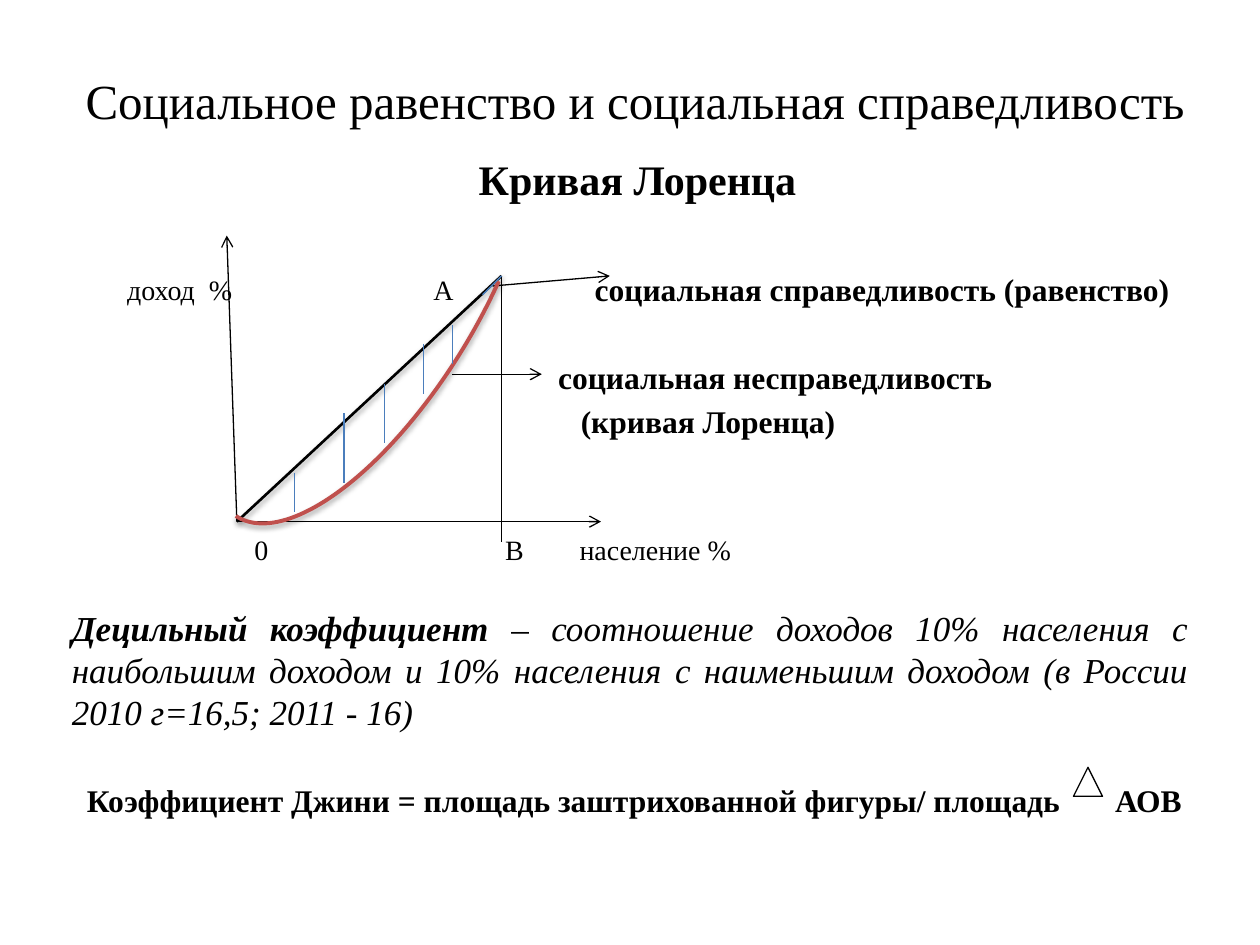
from pptx import Presentation
from pptx.dml.color import RGBColor
from pptx.enum.shapes import MSO_CONNECTOR, MSO_SHAPE
from pptx.enum.text import MSO_ANCHOR, PP_ALIGN
from pptx.oxml.ns import qn
from pptx.util import Inches, Pt
from lxml import etree

STRAIGHT = MSO_CONNECTOR.STRAIGHT
ARC, TRIANGLE = MSO_SHAPE.ARC, MSO_SHAPE.ISOSCELES_TRIANGLE
LEFT, CENTER, JUSTIFY = PP_ALIGN.LEFT, PP_ALIGN.CENTER, PP_ALIGN.JUSTIFY
MIDDLE = MSO_ANCHOR.MIDDLE
BLACK = RGBColor(0x00, 0x00, 0x00)
WHITE = RGBColor(0xFF, 0xFF, 0xFF)
RED = RGBColor(0xC0, 0x50, 0x4D)
BLUE = RGBColor(0x4B, 0x7E, 0xBC)
FONT = "Times New Roman"

TITLE = "Социальное равенство и социальная справедливость"
SUBTITLE = "Кривая Лоренца"
TERM = "Децильный коэффициент "
DEFINITION = ("– соотношение доходов 10% населения с наибольшим доходом "
              "и 10% населения с наименьшим доходом (в России 2010 г=16,5; 2011 - 16)")

AXIS_LABELS = [
    ("доход  %", 1.01, 2.16, 1),
    ("А", 3.44, 2.16, 0.3),
    ("0", 2.02, 4.23, 0.3),
    ("В", 4.01, 4.23, 0.3),
    ("население %", 4.6, 4.23, 1.5),
]
BOLD_LABELS = [
    ("социальная справедливость (равенство)", 4.72, 2.14, 4.8),
    ("социальная несправедливость", 4.43, 2.84, 4),
    ("(кривая Лоренца)", 4.61, 3.19, 3),
    ("Коэффициент Джини = площадь заштрихованной фигуры/ площадь", 0.69, 6.2, 7.82),
    ("АОВ", 8.85, 6.2, 0.7),
]

ORIGIN, POINT_A = (1.88, 4.14), (3.98, 2.19)
ARROWS = [
    (ORIGIN, (1.8, 1.87)),
    (ORIGIN, (4.77, 4.14)),
    ((3.91, 2.27), (4.84, 2.19)),
    ((3.59, 2.97), (4.3, 2.97)),
]
HATCHES = [(3.59, 2.58, 2.89), (3.36, 2.73, 3.13), (3.05, 3.05, 3.52),
           (2.73, 3.28, 3.83), (2.34, 3.75, 4.06)]

prs = Presentation()
prs.slide_width, prs.slide_height = Inches(10), Inches(7.5)
slide = prs.slides.add_slide(prs.slide_layouts[6])


def add_text(runs, left, top, width, height, size, align=LEFT, wrap=False):
    box = slide.shapes.add_textbox(*map(Inches, (left, top, width, height)))
    frame = box.text_frame
    frame.margin_left = frame.margin_right = frame.margin_top = frame.margin_bottom = 0
    frame.word_wrap = wrap
    paragraph = frame.paragraphs[0]
    paragraph.alignment = align
    for text, bold, italic in runs:
        run = paragraph.add_run()
        run.text = text
        font = run.font
        font.name, font.size, font.bold, font.italic = FONT, Pt(size), bold, italic
        font.color.rgb = BLACK
    return frame


def set_effects(shape, shadow_alpha=None):
    effects = etree.SubElement(shape.element.spPr, qn("a:effectLst"))
    if shadow_alpha:
        shadow = etree.SubElement(effects, qn("a:outerShdw"), blurRad=str(Pt(3.1)),
                                  dist=str(Pt(1.6)), dir="5400000", rotWithShape="0")
        color = etree.SubElement(shadow, qn("a:srgbClr"), val=str(BLACK))
        etree.SubElement(color, qn("a:alpha"), val=str(shadow_alpha * 1000))


def add_line(start, end, color=BLACK, width=0.75, arrow=False, shadow_alpha=None):
    line = slide.shapes.add_connector(STRAIGHT, *map(Inches, (*start, *end)))
    line.line.color.rgb = color
    line.line.width = Pt(width)
    if arrow:
        etree.SubElement(line.element.spPr.find(qn("a:ln")), qn("a:tailEnd"), type="arrow")
    set_effects(line, shadow_alpha)


title = add_text([(TITLE, False, False)], 0.47, 0.4, 9.14, 0.78, 28, CENTER, True)
title.vertical_anchor = MIDDLE
add_text([(SUBTITLE, True, False)], 3.06, 1.22, 4, 0.4, 24, CENTER, True)
for labels, size, bold in ((AXIS_LABELS, 16, False), (BOLD_LABELS, 18, True)):
    for text, left, top, width in labels:
        add_text([(text, bold, False)], left, top, width, 0.3, size)
add_text([(TERM, True, True), (DEFINITION, False, True)],
         0.57, 4.81, 8.86, 1, 20, JUSTIFY, True)

for start, end in ARROWS:
    add_line(start, end, arrow=True)
add_line(ORIGIN, POINT_A, width=1.5, shadow_alpha=38)

lorenz_curve = slide.shapes.add_shape(ARC, *map(Inches, (0.89, 1.5, 4.14, 1.67)))
lorenz_curve.rotation = 121.4
for i, degrees in enumerate((232.76, 0.33)):
    lorenz_curve.adjustments[i] = degrees * 0.6
lorenz_curve.fill.background()
lorenz_curve.line.color.rgb = RED
lorenz_curve.line.width = Pt(2.25)
set_effects(lorenz_curve, 35)

add_line(POINT_A, (POINT_A[0], 4.3))
add_line((3.83, 2.34), POINT_A, BLUE)
for x, top, bottom in HATCHES:
    add_line((x, top), (x, bottom), BLUE)

triangle = slide.shapes.add_shape(TRIANGLE, *map(Inches, (8.52, 6.09, 0.23, 0.23)))
triangle.shadow.inherit = False
triangle.fill.solid()
triangle.fill.fore_color.rgb = WHITE
triangle.line.color.rgb = BLACK
triangle.line.width = Pt(0.75)

prs.save("out.pptx")
